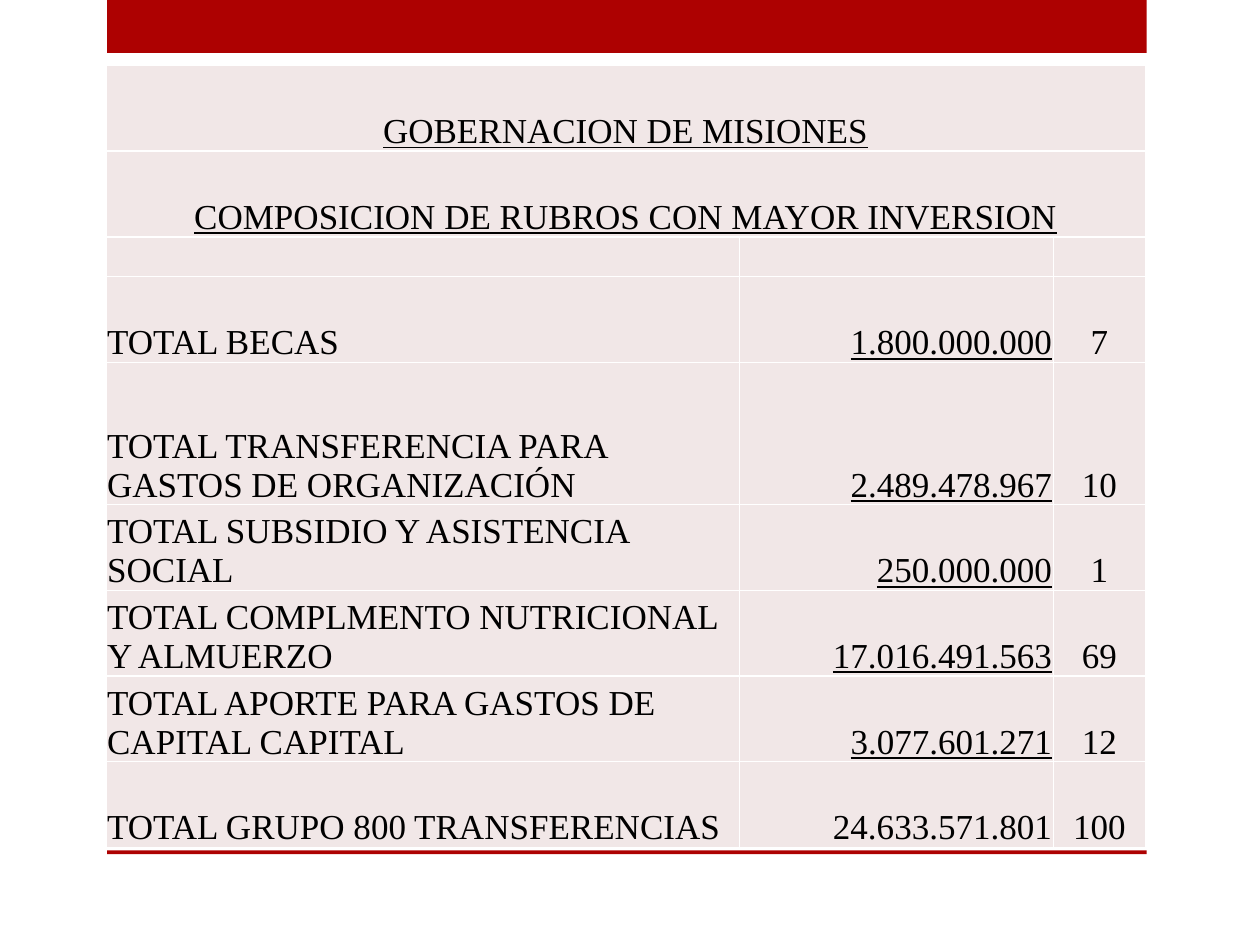
import pptx
import pptx.util
import pptx.dml.color
import pptx.enum.shapes
import pptx.enum.text
import pptx.oxml
import pptx.oxml.ns

Inches = pptx.util.Inches
RGBColor = pptx.dml.color.RGBColor
ALIGN = pptx.enum.text.PP_ALIGN

RED = RGBColor(0xAD, 0x01, 0x01)
PINK = RGBColor(0xF1, 0xE7, 0xE7)
WHITE = RGBColor(0xFF, 0xFF, 0xFF)
BLACK = RGBColor(0, 0, 0)

TITLES = ["GOBERNACION DE MISIONES", "COMPOSICION DE RUBROS CON MAYOR INVERSION"]
ITEMS = [
    ("TOTAL BECAS", "1.800.000.000", "7"),
    ("TOTAL TRANSFERENCIA PARA GASTOS DE ORGANIZACIÓN", "2.489.478.967", "10"),
    ("TOTAL SUBSIDIO Y ASISTENCIA SOCIAL", "250.000.000", "1"),
    ("TOTAL COMPLMENTO NUTRICIONAL Y ALMUERZO", "17.016.491.563", "69"),
    ("TOTAL APORTE PARA GASTOS DE CAPITAL CAPITAL", "3.077.601.271", "12"),
    ("TOTAL GRUPO 800 TRANSFERENCIAS", "24.633.571.801", "100"),
]
COLUMN_WIDTHS = [5.03, 2.49, 0.73]
ROW_HEIGHTS = [0.68, 0.68, 0.3, 0.68, 1.13] + [0.68] * 4
COLUMN_ALIGN = [ALIGN.LEFT, ALIGN.RIGHT, ALIGN.CENTER]


class Deck:
    font = "Times New Roman"
    size = pptx.util.Pt(20)

    def __init__(self, prs):
        self.s = prs.slides.add_slide(prs.slide_layouts[6])

    def bar(self, left, top, width, height):
        sp = self.s.shapes.add_shape(
            pptx.enum.shapes.MSO_SHAPE.RECTANGLE,
            Inches(left), Inches(top), Inches(width), Inches(height))
        sp.shadow.inherit = False
        sp.fill.solid()
        sp.fill.fore_color.rgb = RED
        sp.line.fill.background()

    def table(self, left, top, widths, heights):
        tbl = self.s.shapes.add_table(
            len(heights), len(widths), Inches(left), Inches(top),
            Inches(sum(widths)), Inches(sum(heights))).table
        tbl.first_row = tbl.horz_banding = False
        for column, width in zip(tbl.columns, widths):
            column.width = Inches(width)
        for row, height in zip(tbl.rows, heights):
            row.height = Inches(height)
        for cell in tbl.iter_cells():
            self.style_cell(cell)
        return tbl

    def style_cell(self, cell):
        cell.margin_left = cell.margin_right = cell.margin_top = Inches(0.01)
        cell.margin_bottom = 0
        cell.vertical_anchor = pptx.enum.text.MSO_ANCHOR.BOTTOM
        # Borders come before the fill in the cell properties
        tcPr = cell._tc.get_or_add_tcPr()
        for side in "LRTB":
            tcPr.append(pptx.oxml.parse_xml(
                f'<a:ln{side} {pptx.oxml.ns.nsdecls("a")} w="{pptx.util.Pt(1)}">'
                f'<a:solidFill><a:srgbClr val="{WHITE}"/></a:solidFill></a:ln{side}>'))
        cell.fill.solid()
        cell.fill.fore_color.rgb = PINK

    def cell_text(self, cell, text, align, underline=False):
        p = cell.text_frame.paragraphs[0]
        p.alignment = align
        r = p.add_run()
        r.text = text
        r.font.name = self.font
        r.font.size = self.size
        r.font.color.rgb = BLACK
        r.font.underline = underline


def main():
    prs = pptx.Presentation()
    prs.slide_width, prs.slide_height = Inches(10), Inches(7.5)
    deck = Deck(prs)

    # Top and bottom bars
    deck.bar(0.85, 0, 8.25, 0.42)
    deck.bar(0.85, 6.75, 8.25, 0.03)

    # Table with two merged title rows
    tbl = deck.table(0.84, 0.52, COLUMN_WIDTHS, ROW_HEIGHTS)
    for i, title in enumerate(TITLES):
        tbl.cell(i, 0).merge(tbl.cell(i, 2))
        deck.cell_text(tbl.cell(i, 0), title, ALIGN.CENTER, underline=True)

    # Items: every amount but the total is underlined
    for i, item in enumerate(ITEMS):
        for j, text in enumerate(item):
            underline = j == 1 and i < len(ITEMS) - 1
            deck.cell_text(tbl.cell(i + 3, j), text, COLUMN_ALIGN[j], underline)

    prs.save("out.pptx")


if __name__ == "__main__":
    main()
